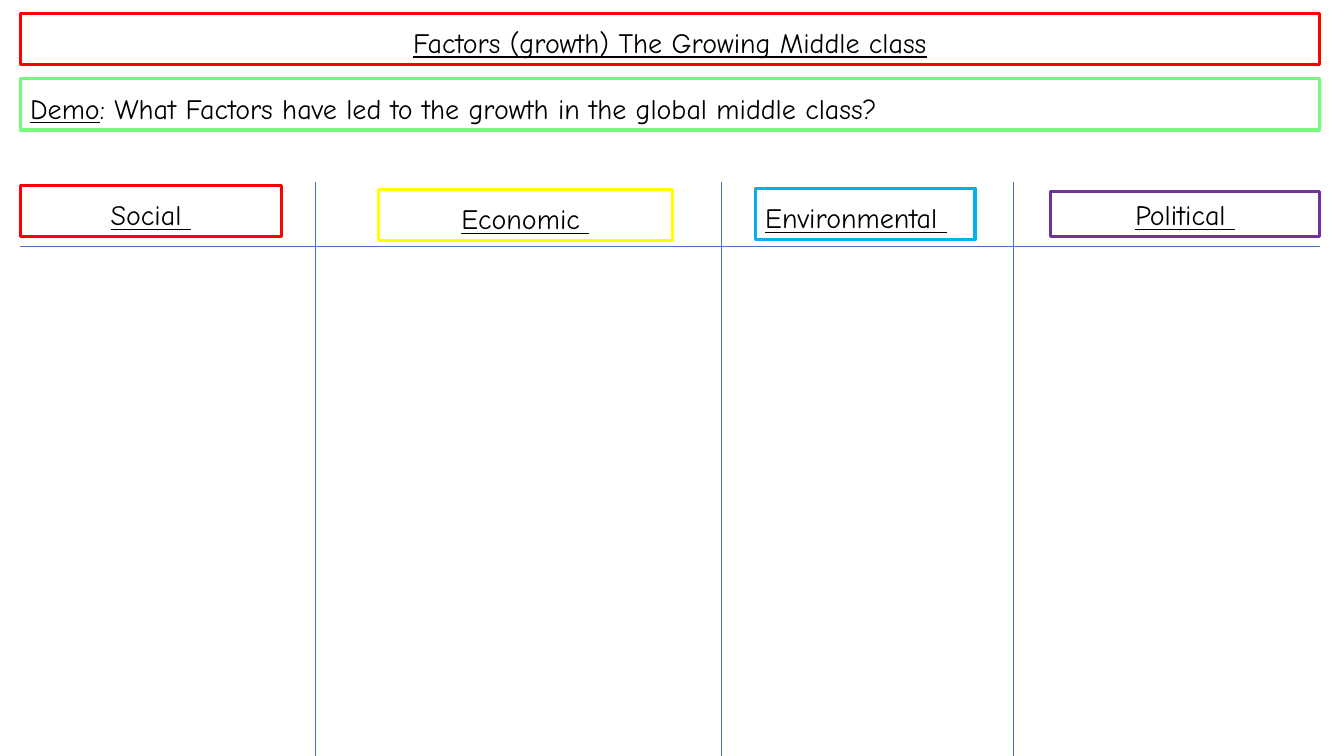
"""Builds a four-column worksheet on the growth of the global middle class."""
from dataclasses import dataclass

from lxml import etree
from pptx import Presentation
from pptx.dml.color import RGBColor
from pptx.enum.shapes import MSO_CONNECTOR, MSO_SHAPE
from pptx.enum.text import MSO_ANCHOR, PP_ALIGN
from pptx.oxml.ns import qn
from pptx.util import Inches, Pt

RECT = MSO_SHAPE.RECTANGLE
STRAIGHT = MSO_CONNECTOR.STRAIGHT
BOTTOM = MSO_ANCHOR.BOTTOM
LEFT, CENTER = PP_ALIGN.LEFT, PP_ALIGN.CENTER


@dataclass(frozen=True)
class Theme:
    font: str = "Comic Neue"
    size: float = 20
    border: float = 2.25
    rule: float = 0.5
    white: str = "FFFFFF"
    black: str = "000000"
    red: str = "FF0000"
    green: str = "73FB79"
    yellow: str = "FFFF00"
    cyan: str = "00B0F0"
    purple: str = "7030A0"
    blue: str = "4472C4"


THEME = Theme()

WIDTH, HEIGHT = 13.33, 7.5
EDGE, SPAN, TALL = 0.2, 12.89, 0.51
TOP, HEAD = 1.81, 2.44

TITLE = [("Factors (growth) The Growing Middle class", True)]
DEMO = [
    ("Demo", True),
    (": What Factors have led to the growth in the global middle class?", False),
]
BANDS = [
    (TITLE, (EDGE, 0.13, SPAN, TALL), THEME.red, CENTER),
    (DEMO, (EDGE, 0.78, SPAN, TALL), THEME.green, LEFT),
]
HEADS = [
    ("Social ", (EDGE, 1.84, 2.59, TALL), THEME.red, CENTER),
    ("Economic ", (3.75, 1.88, 2.92, TALL), THEME.yellow, CENTER),
    ("Environmental ", (7.49, 1.87, 2.18, TALL), THEME.cyan, LEFT),
    ("Political ", (10.42, 1.9, 2.67, 0.45), THEME.purple, CENTER),
]
SPLITS = [3.13, 7.15, 10.05]


def color(code):
    return RGBColor.from_string(code)


def write(frame, runs, align=CENTER, size=THEME.size, ink=THEME.black):
    frame.word_wrap = True
    frame.vertical_anchor = BOTTOM
    para = frame.paragraphs[0]
    para.alignment = align
    para.line_spacing = 0.9
    for text, under in runs:
        run = para.add_run()
        run.text = text
        run.font.name = THEME.font
        run.font.size = Pt(size)
        run.font.underline = under
        run.font.color.rgb = color(ink)


def add_box(slide, runs, place, edge, align):
    box = slide.shapes.add_shape(RECT, *map(Inches, place))
    box.shadow.inherit = False
    box.fill.solid()
    box.fill.fore_color.rgb = color(THEME.white)
    box.line.color.rgb = color(edge)
    box.line.width = Pt(THEME.border)
    write(box.text_frame, runs, align=align)


def add_rule(slide, *ends):
    rule = slide.shapes.add_connector(STRAIGHT, *map(Inches, ends))
    rule.line.color.rgb = color(THEME.blue)
    rule.line.width = Pt(THEME.rule)
    etree.SubElement(rule._element.spPr, qn("a:effectLst"))


def main():
    deck = Presentation()
    deck.slide_width, deck.slide_height = Inches(WIDTH), Inches(HEIGHT)
    slide = deck.slides.add_slide(deck.slide_layouts[6])
    for band in BANDS:
        add_box(slide, *band)
    for label, place, edge, align in HEADS:
        add_box(slide, [(label, True)], place, edge, align)
    add_rule(slide, EDGE, HEAD, EDGE + SPAN, HEAD)
    for x in SPLITS:
        add_rule(slide, x, TOP, x, HEIGHT)
    deck.save("out.pptx")


if __name__ == "__main__":
    main()
